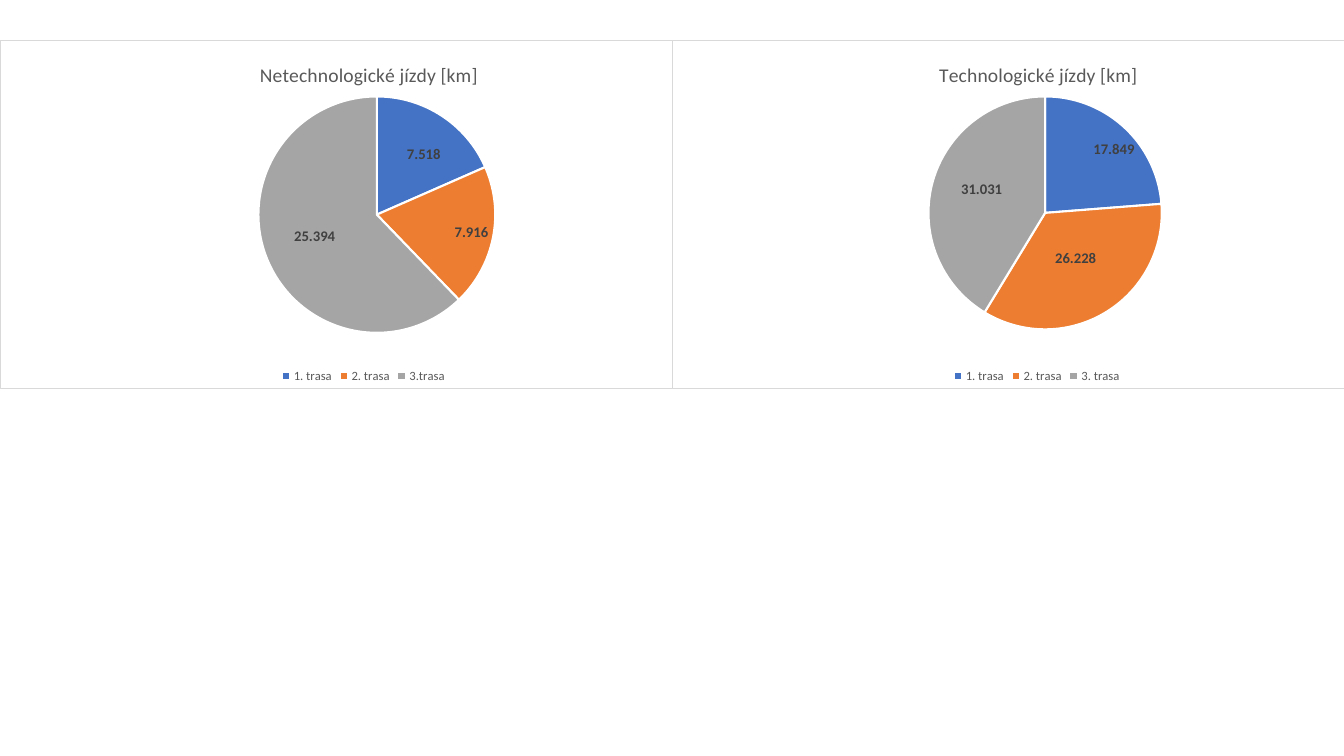
import pptx
import pptx.chart.data
import pptx.dml.color
import pptx.enum.chart
import pptx.oxml
import pptx.oxml.ns
import pptx.util
from dataclasses import dataclass

Pt = pptx.util.Pt
RGB = pptx.dml.color.RGBColor.from_string
qn = pptx.oxml.ns.qn
SPACE = pptx.oxml.ns.nsdecls("c", "a")


@dataclass(frozen=True)
class Theme:
    face: str = "Calibri"
    slices: tuple = ("4472C4", "ED7D31", "A5A5A5")
    paper: str = "FFFFFF"
    frame: str = "D9D9D9"
    soft: str = "595959"
    dark: str = "404040"
    black: str = "000000"
    base: float = 10
    title: float = 14
    label: float = 10.5
    legend: float = 9


THEME = Theme()


def style(font, size, color, bold=False):
    form = {"name": THEME.face, "size": Pt(size), "bold": bold}
    for key, value in form.items():
        setattr(font, key, value)
    font.color.rgb = RGB(color)


def layout(parent, index, inner=False, mode="edge", **spots):
    for old in parent.findall(qn("c:layout")):
        parent.remove(old)
    target = '<c:layoutTarget val="inner"/>' if inner else ""
    modes = "".join(f'<c:{k}Mode val="{mode}"/>' for k in "xy") if mode else ""
    places = "".join(f'<c:{k} val="{v}"/>' for k, v in spots.items())
    parent.insert(index, pptx.oxml.parse_xml(
        f"<c:layout {SPACE}><c:manualLayout>{target}{modes}{places}"
        "</c:manualLayout></c:layout>"))


def frame(chart):
    root = chart._chartSpace
    root.find(qn("c:chart")).addnext(pptx.oxml.parse_xml(
        f'<c:spPr {SPACE}><a:solidFill><a:srgbClr val="{THEME.paper}"/></a:solidFill>'
        f'<a:ln w="{Pt(0.75)}"><a:solidFill><a:srgbClr val="{THEME.frame}"/>'
        "</a:solidFill></a:ln></c:spPr>"))


def pie(slide, box, title, left, plot, names, values, shifts):
    data = pptx.chart.data.CategoryChartData()
    data.categories = names
    data.add_series("Series 1", values)
    kind = pptx.enum.chart.XL_CHART_TYPE.PIE
    chart = slide.shapes.add_chart(kind, *map(Pt, box), data).chart
    style(chart.font, THEME.base, THEME.black)
    frame(chart)

    chart.has_title = True
    text = chart.chart_title.text_frame
    text.text = title
    style(text.paragraphs[0].runs[0].font, THEME.title, THEME.soft)
    layout(chart.chart_title._element, 1, x=left, y=0.05)

    chart.has_legend = True
    legend = chart.legend
    legend.position = pptx.enum.chart.XL_LEGEND_POSITION.BOTTOM
    legend.include_in_layout = False
    style(legend.font, THEME.legend, THEME.soft)
    layout(legend._element, 1, x=0.38, y=0.94)

    area = chart.plots[0]
    area.vary_by_categories = True
    layout(area._element.getparent(), 0, inner=True, **plot)
    labels(area)
    for index, (color, shift) in enumerate(zip(THEME.slices, shifts)):
        wedge(area.series[0].points[index], color, shift)


def labels(area):
    area.has_data_labels = True
    area.data_labels.show_value = True
    area.data_labels.show_percentage = False
    style(area.data_labels.font, THEME.label, THEME.dark, True)


def wedge(point, color, shift):
    fill = point.format.fill
    fill.solid()
    fill.fore_color.rgb = RGB(color)
    line = point.format.line
    line.color.rgb = RGB(THEME.paper)
    line.width = Pt(1.5)
    label = point.data_label
    label.position = pptx.enum.chart.XL_LABEL_POSITION.CENTER
    style(label.font, THEME.label, THEME.dark, True)
    item = label._get_or_add_dLbl()
    layout(item, 1, mode=None, x=shift[0], y=shift[1])


def main():
    deck = pptx.Presentation()
    deck.slide_width, deck.slide_height = Pt(960), Pt(540)
    slide = deck.slides.add_slide(deck.slide_layouts[6])
    top, wide, high = 28.8, 522.7, 249.1
    pie(slide, (0, top, wide, high), "Netechnologické jízdy [km]", 0.35,
        {"x": 0.35, "y": 0.16, "w": 0.33, "h": 0.68},
        ("1. trasa", "2. trasa", "3.trasa"), (7.518, 7.916, 25.394),
        ((0.02, -0.03), (0.05, 0.02), (-0.01, 0)))
    pie(slide, (480, top, wide, high), "Technologické jízdy [km]", 0.36,
        {"x": 0.35, "y": 0.16, "w": 0.32, "h": 0.67},
        ("1. trasa", "2. trasa", "3. trasa"), (17.849, 26.228, 31.031),
        ((0.04, -0.06), (0, -0.01), (-0.01, -0.02)))
    deck.save("out.pptx")


if __name__ == "__main__":
    main()
